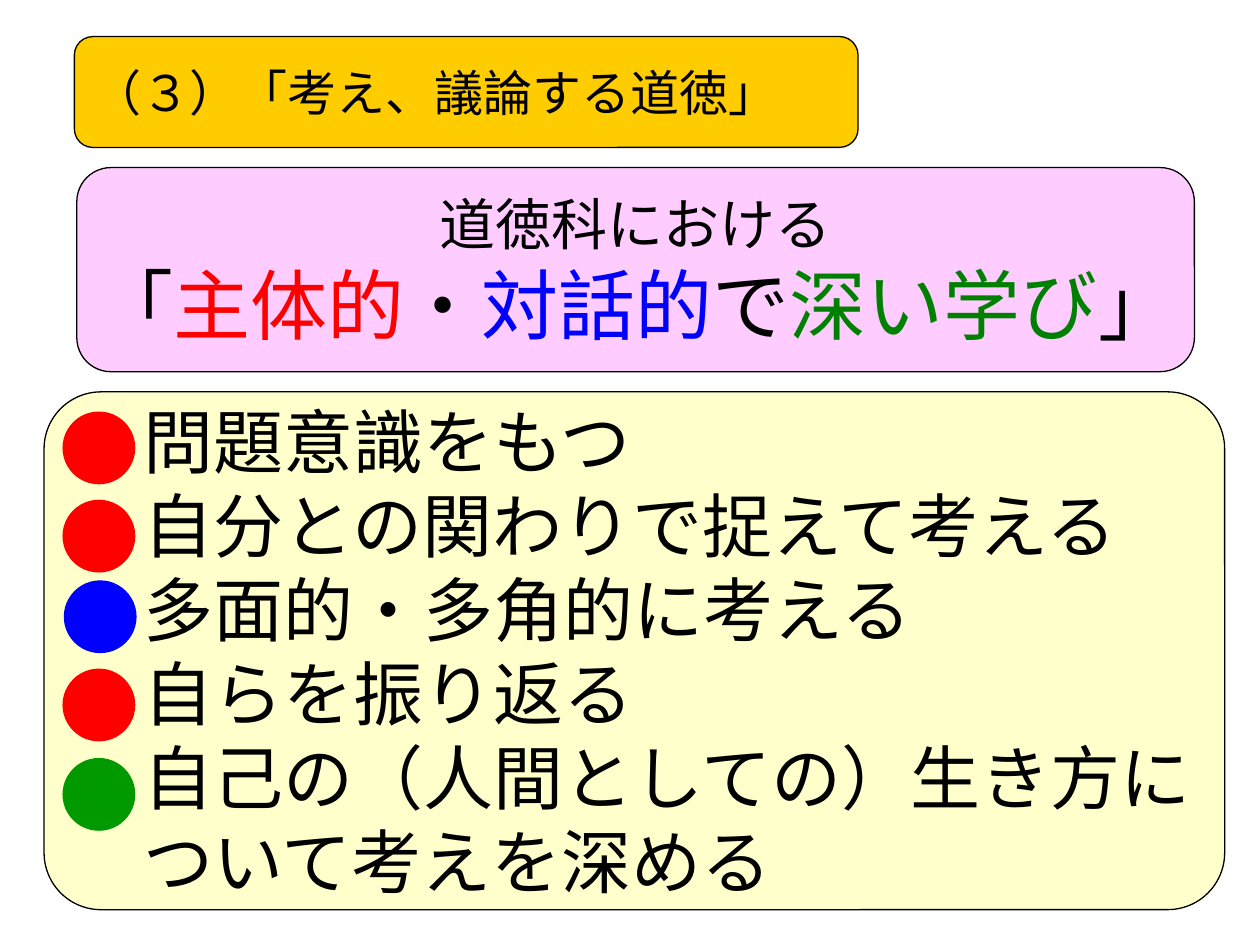
from dataclasses import dataclass

from lxml.etree import SubElement
from pptx import Presentation
from pptx.dml.color import RGBColor
from pptx.enum.shapes import MSO_SHAPE as SHAPE
from pptx.enum.text import MSO_ANCHOR as ANCHOR, PP_ALIGN as ALIGN
from pptx.oxml.ns import qn
from pptx.util import Inches, Pt


@dataclass(frozen=True)
class Theme:
    black: str = "000000"
    red: str = "FF0000"
    blue: str = "0000FF"
    green: str = "008000"
    dot_green: str = "009900"
    gold: str = "FFCC00"
    pink: str = "FFCCFF"
    cream: str = "FFFFCC"
    font: str = "Arial"
    list_font: str = "Noto Sans CJK JP"
    title_size: int = 28
    lead_size: int = 32
    theme_size: int = 44
    list_size: int = 40


def add_run(p, text, *, size, color, font):
    r = p.add_run()
    r.text = text
    r.font.size = Pt(size)
    r.font.color.rgb = RGBColor.from_string(color)
    r.font.name = font
    # Japanese glyphs take their font from the East Asian slot
    SubElement(r._r.get_or_add_rPr(), qn("a:ea")).set("typeface", font)


class SlideBuilder:
    def __init__(self, slide, theme):
        self.s = slide
        self.theme = theme

    def shape(self, kind, x, y, w, h, *, fill, line, weight):
        sp = self.s.shapes.add_shape(kind, Inches(x), Inches(y), Inches(w), Inches(h))
        sp.shadow.inherit = False
        sp.fill.solid()
        sp.fill.fore_color.rgb = RGBColor.from_string(fill)
        sp.line.color.rgb = RGBColor.from_string(line)
        sp.line.width = Pt(weight)
        return sp

    def panel(self, x, y, w, h, paragraphs, *, fill, radius=0.167,
              align=ALIGN.LEFT, font=None, margin_left=0.1):
        """Rounded box; each paragraph is (size, [(text, color), ...])."""
        sp = self.shape(SHAPE.ROUNDED_RECTANGLE, x, y, w, h,
                        fill=fill, line=self.theme.black, weight=0.75)
        sp.adjustments[0] = radius
        tf = sp.text_frame
        tf.word_wrap = False
        tf.vertical_anchor = ANCHOR.MIDDLE
        tf.margin_left = Inches(margin_left)
        for i, (size, runs) in enumerate(paragraphs):
            p = tf.add_paragraph() if i else tf.paragraphs[0]
            p.alignment = align
            for text, color in runs:
                add_run(p, text, size=size, color=color, font=font or self.theme.font)

    def dot(self, x, y, color, size=0.55):
        self.shape(SHAPE.OVAL, x, y, size, size, fill=color, line=color, weight=2)


def main():
    prs = Presentation()
    prs.slide_width, prs.slide_height = Inches(10), Inches(7.5)
    t = Theme()
    b = SlideBuilder(prs.slides.add_slide(prs.slide_layouts[6]), t)

    b.panel(0.59, 0.29, 6.22, 0.88,
            [(t.title_size, [("（３）「考え、議論する道徳」", t.black)])], fill=t.gold)

    learning = [("「", t.black), ("主体的", t.red), ("・", t.black), ("対話的", t.blue),
                ("で", t.black), ("深い学び", t.green), ("」", t.black)]
    b.panel(0.61, 1.33, 8.87, 1.62,
            [(t.lead_size, [("道徳科における", t.black)]), (t.theme_size, learning)],
            fill=t.pink, align=ALIGN.CENTER)

    points = ["問題意識をもつ", "自分との関わりで捉えて考える", "多面的・多角的に考える",
              "自らを振り返る", "自己の（人間としての）生き方に", "ついて考えを深める"]
    b.panel(0.35, 3.11, 9.37, 4.11,
            [(t.list_size, [(text, t.black)]) for text in points],
            fill=t.cream, radius=0.11, font=t.list_font, margin_left=0.66)

    dots = [(0.51, 3.28, t.red), (0.51, 3.98, t.red), (0.52, 4.62, t.blue),
            (0.51, 5.32, t.red), (0.51, 6.03, t.dot_green)]
    for x, y, color in dots:
        b.dot(x, y, color)

    prs.save("out.pptx")


if __name__ == "__main__":
    main()
